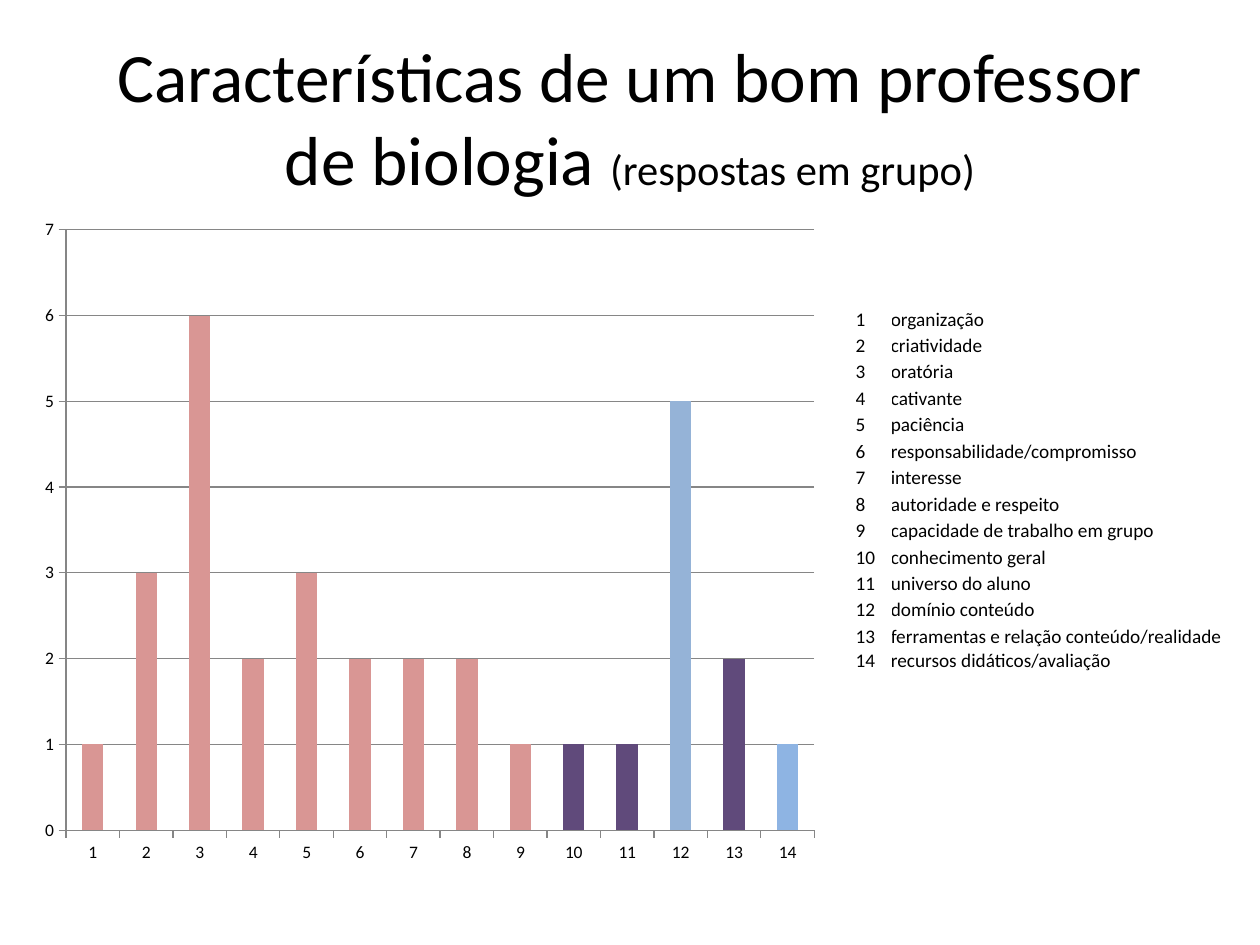
from pptx import Presentation
from pptx.chart.data import CategoryChartData
from pptx.dml.color import RGBColor
from pptx.enum.chart import XL_CHART_TYPE as ChartType, XL_TICK_MARK as TickMark
from pptx.enum.text import MSO_ANCHOR as Anchor, PP_ALIGN as Align
from pptx.util import Inches, Pt

FONT = "Calibri"
BLACK, GRAY = "000000", "868686"
PINK, PURPLE, BLUE, LIGHT_BLUE = "D99694", "604A7B", "95B3D7", "8EB4E3"

TITLE = [("Características de um bom professor de biologia ", 39.6),
         ("(respostas em grupo)", 24.3)]
ANSWERS = [
    ("organização", 1, PINK),
    ("criatividade", 3, PINK),
    ("oratória", 6, PINK),
    ("cativante", 2, PINK),
    ("paciência", 3, PINK),
    ("responsabilidade/compromisso", 2, PINK),
    ("interesse", 2, PINK),
    ("autoridade e respeito", 2, PINK),
    ("capacidade de trabalho em grupo", 1, PINK),
    ("conhecimento geral", 1, PURPLE),
    ("universo do aluno", 1, PURPLE),
    ("domínio conteúdo", 5, BLUE),
    ("ferramentas e relação conteúdo/realidade", 2, PURPLE),
    ("recursos didáticos/avaliação", 1, LIGHT_BLUE),
]


def color(value):
    return RGBColor.from_string(value)


def set_values(target, values):
    for name, value in values.items():
        setattr(target, name, value)


def format_font(font, size):
    set_values(font, {"name": FONT, "size": Pt(size), "bold": False})
    font.color.rgb = color(BLACK)


def format_line(line):
    line.color.rgb = color(GRAY)
    line.width = Pt(0.75)


def add_title(slide, left, top, width, height):
    title = slide.shapes.title
    set_values(title, {"left": left, "top": top, "width": width, "height": height})
    set_values(title.text_frame, {"word_wrap": True, "vertical_anchor": Anchor.MIDDLE})
    paragraph = title.text_frame.paragraphs[0]
    paragraph.alignment = Align.CENTER
    for text, size in TITLE:
        run = paragraph.add_run()
        run.text = text
        format_font(run.font, size)


def add_answer_chart(slide, left, top, width, height):
    data = CategoryChartData()
    data.categories = [str(number) for number in range(1, len(ANSWERS) + 1)]
    data.add_series("Series 1", [count for _, count, _ in ANSWERS])
    chart = slide.shapes.add_chart(
        ChartType.COLUMN_CLUSTERED, left, top, width, height, data).chart
    set_values(chart, {"has_title": False, "has_legend": False})
    format_font(chart.font, 10)

    plot = chart.plots[0]
    set_values(plot, {"gap_width": 150, "vary_by_categories": False})
    series = plot.series[0]
    series.invert_if_negative = False
    series.format.fill.solid()
    series.format.fill.fore_color.rgb = color(PINK)
    for index, (_, _, bar_color) in enumerate(ANSWERS):
        if bar_color != PINK:
            fill = series.points[index].format.fill
            fill.solid()
            fill.fore_color.rgb = color(bar_color)

    for axis in (chart.category_axis, chart.value_axis):
        set_values(axis, {"major_tick_mark": TickMark.OUTSIDE,
                          "minor_tick_mark": TickMark.NONE})
        format_line(axis.format.line)
    set_values(chart.value_axis, {"minimum_scale": 0, "maximum_scale": 7,
                                  "major_unit": 1, "has_major_gridlines": True})
    format_line(chart.value_axis.major_gridlines.format.line)


def add_answer_key(slide, left, top, width, height):
    table = slide.shapes.add_table(len(ANSWERS), 2, left, top, width, height).table
    set_values(table, {"first_row": False, "horz_banding": False})
    number_width = Inches(0.28)
    table.columns[0].width = number_width
    table.columns[1].width = width - number_width
    for row in table.rows:
        row.height = Inches(0.21)
    table.rows[len(ANSWERS) - 1].height = Inches(0.1)
    for index, (label, _, _) in enumerate(ANSWERS):
        for column, text in enumerate((str(index + 1), label)):
            cell = table.cell(index, column)
            set_values(cell, {"text": text, "vertical_anchor": Anchor.BOTTOM,
                              "margin_left": 0, "margin_right": 0,
                              "margin_top": 0, "margin_bottom": 0})
            cell.fill.background()
            format_font(cell.text_frame.paragraphs[0].runs[0].font, 11)


def main():
    presentation = Presentation()
    set_values(presentation, {"slide_width": Inches(10), "slide_height": Inches(7.5)})
    slide = presentation.slides.add_slide(presentation.slide_layouts[5])
    add_title(slide, Inches(0.5), Inches(0.3), Inches(9), Inches(1.25))
    add_answer_chart(slide, Inches(0.23), Inches(1.64), Inches(6.36), Inches(5.31))
    add_answer_key(slide, Inches(6.79), Inches(2.42), Inches(3.29), Inches(2.89))
    presentation.save("out.pptx")


if __name__ == "__main__":
    main()
